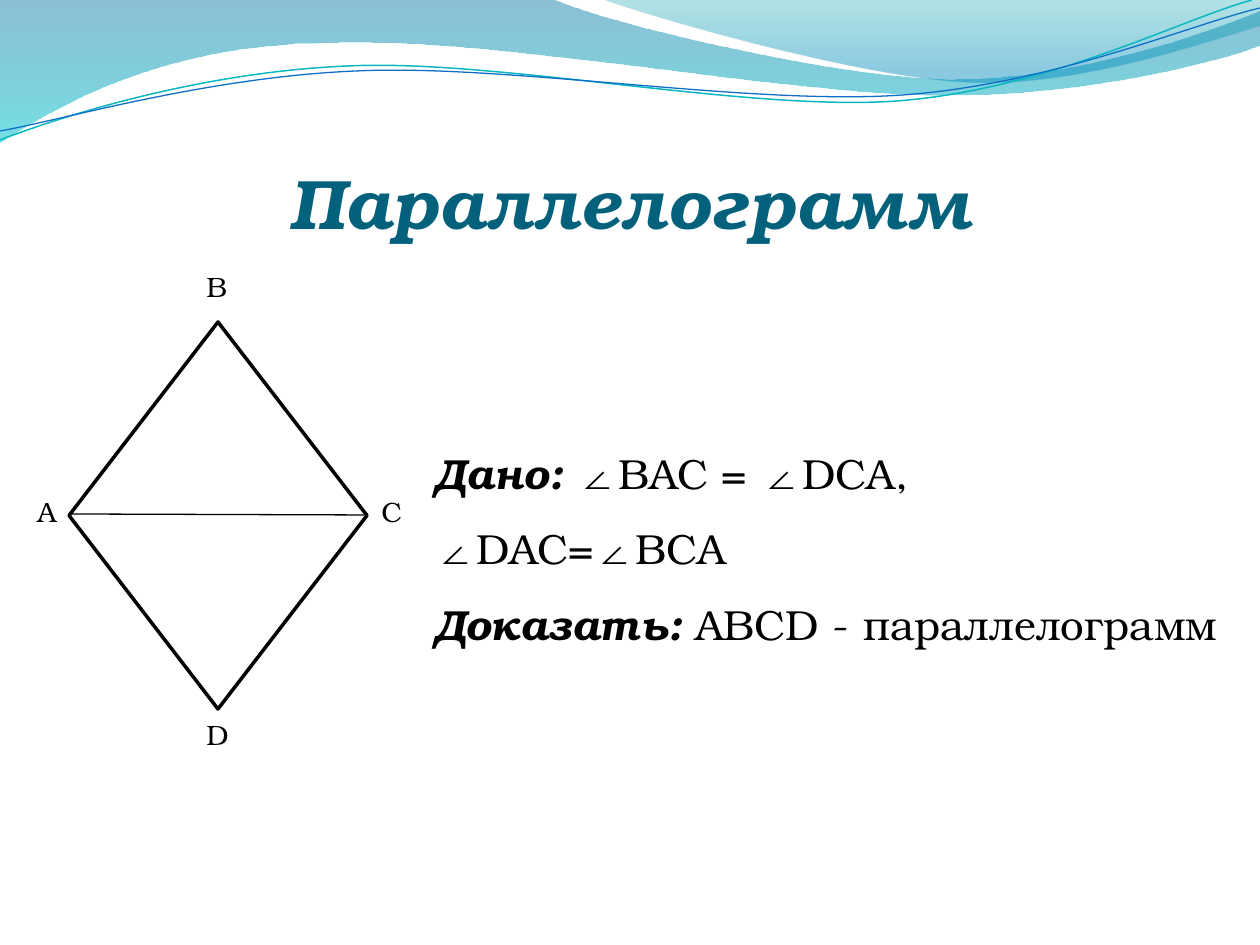
from lxml import etree
from pptx import Presentation
from pptx.dml.color import RGBColor
from pptx.enum.shapes import MSO_CONNECTOR, MSO_SHAPE
from pptx.enum.text import MSO_ANCHOR, MSO_AUTO_SIZE, PP_ALIGN
from pptx.oxml.ns import qn
from pptx.util import Pt

DIAMOND = MSO_SHAPE.DIAMOND
LINE = MSO_CONNECTOR.STRAIGHT
BOTTOM, CENTER = MSO_ANCHOR.BOTTOM, PP_ALIGN.CENTER
GROW, FIXED = MSO_AUTO_SIZE.SHAPE_TO_FIT_TEXT, MSO_AUTO_SIZE.NONE
FONT = "TeX Gyre Bonum"
BLACK = "000000"

BANDS = [
    ([(0, 0), (554, 0), (600, 21, 837, 79, 955, 79),
      (1074, 79, 1207, 33, 1260, 11), (1260, 45),
      (1239, 55, 1096, 96, 940, 95), (784, 95, 481, 35, 324, 43),
      (163, 45, 58, 105, 0, 142), (0, 0)],
     [(0, "0074A1", 45), (1, "00C6CF", 55)]),
    ([(604, 0), (641, 14, 859, 78, 969, 82),
      (1079, 87, 1211, 40, 1260, 26), (1260, 0), (604, 0)],
     [(0, "00A1A9", 30), (0.8, "008BBF", 45)]),
]
WAVES = [
    ([(0, 140), (60, 117, 199, 72, 349, 66), (498, 59, 747, 112, 898, 101),
      (1050, 89, 1182, 19, 1252, 0)], "0AB8BF", 0.85),
    ([(0, 131), (59, 121, 207, 77, 357, 71), (508, 64, 752, 106, 903, 95),
      (1053, 84, 1186, 26, 1260, 8)], "0F6FC6", 0.75),
]
LABELS = [("B", 125, -59), ("A", -44, 166), ("C", 300, 166), ("D", 125, 389)]
TASK = [
    [("Дано: ", True), ("∠ВАС = ∠DСА,", False), None, ("∠DАС=∠ВСА", False)],
    [("Доказать:", True), (" АВСD - параллелограмм", False)],
]


def px(n):
    """Turn px into EMU."""
    return round(n * 914400 / 126)


def color(code):
    """Turn a hex string into a colour."""
    return RGBColor.from_string(code)


def assign(item, vals):
    """Set each named value on an item."""
    for name, val in vals.items():
        setattr(item, name, val)


def style(run, size, code=BLACK, strong=False):
    """Format the font of a run."""
    assign(run.font, {"name": FONT, "size": Pt(size),
                      "bold": strong, "italic": strong})
    run.font.color.rgb = color(code)


def stroke(item, code, width):
    """Give an item a plain line."""
    item.line.color.rgb = color(code)
    item.line.width = Pt(width)


def bend(shape, steps):
    """Join each three points of a curved step into one cubic curve."""
    legs = iter(list(shape.element.iter(qn("a:lnTo"))))
    for step in steps[1:]:
        leg = next(legs)
        if len(step) == 6:
            leg.tag = qn("a:cubicBezTo")
            for _ in range(2):
                other = next(legs)
                leg.append(other[0])
                other.getparent().remove(other)


def outline(slide, box, steps, close):
    """Draw a curved freeform inside a box."""
    spots = [(px(box[0] + x), px(box[1] + y)) for step in steps
             for x, y in zip(step[::2], step[1::2])]
    pen = slide.shapes.build_freeform(*spots[0], scale=1.0)
    pen.add_line_segments(spots[1:], close=close)
    shape = pen.convert_to_shape()
    bend(shape, steps)
    shape.shadow.inherit = False
    return shape


def blend(shape, stops):
    """Fill a shape with a clear gradient from top to bottom."""
    shape.fill.gradient()
    shape.fill.gradient_angle = 270
    for stop, (place, code, _) in zip(shape.fill.gradient_stops, stops):
        stop.position = place
        stop.color.rgb = color(code)
    tints = shape.element.spPr.iter(qn("a:srgbClr"))
    for tint, (_, _, alpha) in zip(tints, stops):
        etree.SubElement(tint, qn("a:alpha")).set("val", str(alpha * 1000))


def add_waves(slide, box):
    """Draw the bands and curves at the top."""
    for steps, stops in BANDS:
        band = outline(slide, box, steps, True)
        blend(band, stops)
        band.line.fill.background()
    for steps, code, width in WAVES:
        wave = outline(slide, box, steps, False)
        wave.fill.background()
        stroke(wave, code, width)


def add_title(slide, box):
    """Place and format the title."""
    title = slide.shapes.title
    assign(title, dict(zip(("left", "top", "width", "height"), map(px, box))))
    frame = title.text_frame
    assign(frame, {"margin_left": 0, "margin_top": px(6), "margin_right": 0,
                   "margin_bottom": 0, "vertical_anchor": BOTTOM,
                   "word_wrap": True, "auto_size": FIXED})
    para = frame.paragraphs[0]
    para.alignment = CENTER
    run = para.add_run()
    run.text = "Параллелограмм"
    style(run, 40, "04617B", True)


def add_figure(slide, box):
    """Draw the diamond with its diagonal and corner labels."""
    x, y, w, h = box
    for name, dx, dy in LABELS:
        spot = map(px, (x + dx, y + dy, 112, 100))
        frame = slide.shapes.add_textbox(*spot).text_frame
        frame.word_wrap = True
        run = frame.paragraphs[0].add_run()
        run.text = name
        style(run, 16)
    rhomb = slide.shapes.add_shape(DIAMOND, *map(px, box))
    rhomb.shadow.inherit = False
    rhomb.fill.background()
    stroke(rhomb, BLACK, 2)
    mid = y + h // 2
    ends = map(px, (x, mid - 1, x + w, mid))
    chord = slide.shapes.add_connector(LINE, *ends)
    stroke(chord, BLACK, 0.75)
    etree.SubElement(chord.element.spPr, qn("a:effectLst"))


def add_task(slide, box):
    """Write what is given and what to prove."""
    frame = slide.shapes.add_textbox(*map(px, box)).text_frame
    assign(frame, {"word_wrap": True, "auto_size": GROW})
    for i, parts in enumerate(TASK):
        para = frame.add_paragraph() if i else frame.paragraphs[0]
        para.line_spacing = 1.5
        for part in parts:
            if part is None:
                para.add_line_break()
                continue
            run = para.add_run()
            run.text = part[0]
            style(run, 24, strong=part[1])


def main():
    """Build and save the slide."""
    deck = Presentation()
    assign(deck, {"slide_width": px(1260), "slide_height": px(945)})
    slide = deck.slides.add_slide(deck.slide_layouts[5])
    add_waves(slide, (0, 0, 1260, 142))
    add_title(slide, (63, 86, 1134, 158))
    add_figure(slide, (69, 322, 298, 387))
    add_task(slide, (422, 416, 814, 165))
    deck.save("out.pptx")


if __name__ == "__main__":
    main()
